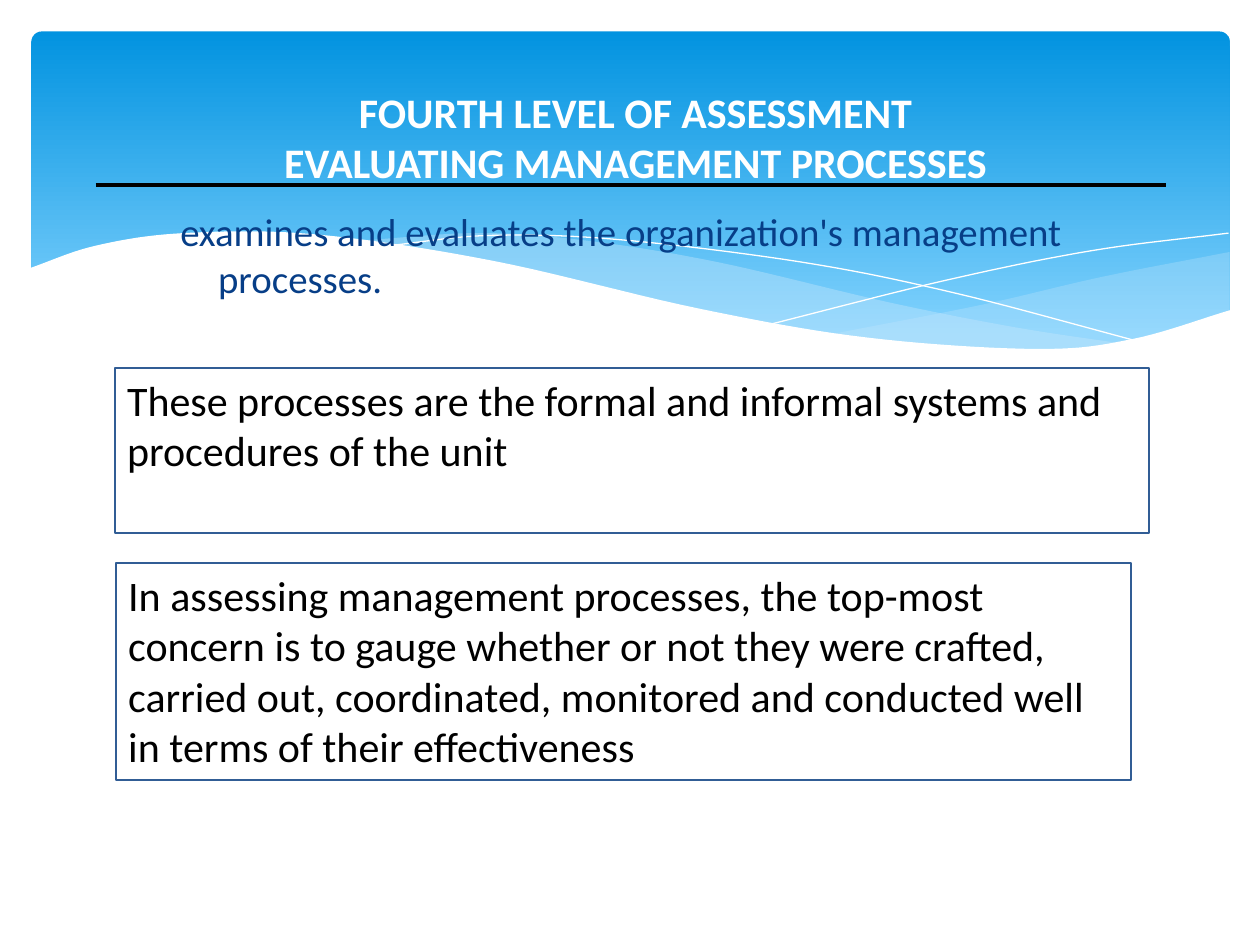
import pptx
import pptx.dml.color
import pptx.enum.shapes
import pptx.enum.text
import pptx.oxml
import pptx.oxml.ns
import pptx.util

Pt = pptx.util.Pt
RGBColor = pptx.dml.color.RGBColor
MSO_SHAPE = pptx.enum.shapes.MSO_SHAPE
MSO_ANCHOR = pptx.enum.text.MSO_ANCHOR
PP_ALIGN = pptx.enum.text.PP_ALIGN
DRAWING_NS = pptx.oxml.ns.nsdecls("a")

WHITE = RGBColor(0xFF, 0xFF, 0xFF)
BLACK = RGBColor(0, 0, 0)
SKY_TOP = RGBColor(0x02, 0x93, 0xE0)
SKY_BOTTOM = RGBColor(0x83, 0xD3, 0xFE)
PALE_BLUE = RGBColor(0xC6, 0xE7, 0xFC)
NAVY = RGBColor(0x07, 0x3E, 0x87)
BOX_BLUE = RGBColor(0x31, 0x5D, 0x95)

CURVE_STEPS = 10
HEADER_LEFT, HEADER_RIGHT, HEADER_BOTTOM = 16.6, 703.4, 236.9


def smooth_curve(knots):
    """Return points on a Catmull-Rom spline that passes through the knots."""
    (x0, y0), (x1, y1) = knots[:2]
    (x2, y2), (x3, y3) = knots[-2:]
    # One mirrored knot at each end gives the end pieces their direction.
    guides = [(2 * x0 - x1, 2 * y0 - y1), *knots, (2 * x3 - x2, 2 * y3 - y2)]
    points = [knots[0]]
    for piece in zip(guides, guides[1:], guides[2:], guides[3:]):
        for step in range(1, CURVE_STEPS + 1):
            t = step / CURVE_STEPS
            weights = ((-t + 2 * t**2 - t**3) / 2, (2 - 5 * t**2 + 3 * t**3) / 2,
                       (t + 4 * t**2 - 3 * t**3) / 2, (t**3 - t**2) / 2)
            points.append(tuple(sum(weight * knot[axis] for weight, knot in zip(weights, piece))
                                for axis in (0, 1)))
    return points


def write(shape, text, color, size, bold=False, **frame_format):
    """Fill the shape with one paragraph and return that paragraph."""
    frame = shape.text_frame
    frame.text = text
    frame_format = {"word_wrap": True, "auto_size": pptx.enum.text.MSO_AUTO_SIZE.NONE,
                    "vertical_anchor": MSO_ANCHOR.TOP, **frame_format}
    for key, value in frame_format.items():
        setattr(frame, key, value)
    paragraph = frame.paragraphs[0]
    for run in paragraph.runs:
        for key, value in {"name": "Calibri", "size": Pt(size), "bold": bold}.items():
            setattr(run.font, key, value)
        run.font.color.rgb = color
    return paragraph


presentation = pptx.Presentation()
presentation.slide_width, presentation.slide_height = Pt(720), Pt(540)
slide = presentation.slides.add_slide(presentation.slide_layouts[1])
shapes = slide.shapes
title, definition = slide.placeholders

# Blue header
header = shapes.add_shape(MSO_SHAPE.ROUNDED_RECTANGLE, Pt(18), Pt(18), Pt(684.7), Pt(194.4))
header.adjustments[0] = 0.03
header.shadow.inherit = False
header.line.fill.background()
header.fill.gradient()
header.fill.gradient_angle = 270
for stop, position, color in zip(header.fill.gradient_stops, (0, 0.9), (SKY_TOP, SKY_BOTTOM)):
    stop.position = position
    stop.color.rgb = color

# Waves from back to front: each has an upper edge, and a filled one also a lower edge.
# The white wave comes last and trims the header's bottom.
right_band = {
    "upper": [(476, 190.8), (561, 174.2), (630, 158.2), (702.7, 144)],
    "lower": [(476, 190.8), (536, 198), (578, 200), (640, 195.8), (702.7, 177.8)],
    "fill": PALE_BLUE, "opacity": 29}
middle_band = {
    "upper": [(206, 137.5), (274, 133.2), (335, 137.5), (410, 149.8), (508, 172.8),
              (581, 187.2), (643, 196.6)],
    "lower": [(206, 137.5), (261, 146.2), (323, 159.8), (433, 183.6), (520, 196.6),
              (589, 200.2), (643, 196.6)],
    "fill": PALE_BLUE, "opacity": 40}
falling_line = {
    "upper": [(222.5, 140.4), (279, 134.6), (352, 136.8), (458, 149.8), (547, 167.8),
              (653, 195.8)]}
rising_line = {"upper": [(441.4, 185), (538.6, 160.6), (623.5, 143.3), (702, 133.2)]}
white_wave = {
    "upper": [(HEADER_LEFT, 153.4), (54.7, 140.4), (105, 133.2), (180, 133.9), (281.5, 149),
              (399.6, 176.4), (495.4, 192.9), (592.6, 199.4), (647.3, 193.7),
              (HEADER_RIGHT, 177.1)],
    "lower": [(HEADER_LEFT, HEADER_BOTTOM), (HEADER_RIGHT, HEADER_BOTTOM)],
    "fill": WHITE, "opacity": 100}

for wave in (right_band, middle_band, falling_line, rising_line, white_wave):
    filled = "fill" in wave
    outline = smooth_curve(wave["upper"])
    if filled:
        outline += reversed(smooth_curve(wave["lower"]))
    outline = [(Pt(x), Pt(y)) for x, y in outline]
    builder = shapes.build_freeform(*outline[0])
    builder.add_line_segments(outline[1:], close=filled)
    ribbon = builder.convert_to_shape()
    ribbon.shadow.inherit = False
    if filled:
        ribbon.line.fill.background()
        ribbon.fill.solid()
        ribbon.fill.fore_color.rgb = wave["fill"]
        color_element = ribbon._element.spPr.find(".//" + pptx.oxml.ns.qn("a:srgbClr"))
        color_element.append(pptx.oxml.parse_xml(
            f'<a:alpha {DRAWING_NS} val="{wave["opacity"] * 1000}"/>'))
    else:
        ribbon.fill.background()
        ribbon.line.color.rgb = WHITE
        ribbon.line.width = Pt(0)

# Title and definition, raised above the header
for placeholder, place in [
        (title, {"left": 48.2, "top": 41, "width": 630, "height": 103.7}),
        (definition, {"left": 95.8, "top": 115.2, "width": 600.5, "height": 53.3})]:
    shapes._spTree.append(placeholder._element)
    for key, value in place.items():
        setattr(placeholder, key, Pt(value))

heading = write(title, "FOURTH LEVEL OF ASSESSMENT\vEVALUATING MANAGEMENT PROCESSES", WHITE, 24,
                bold=True, vertical_anchor=MSO_ANCHOR.MIDDLE, margin_bottom=Pt(32.9))
heading.alignment = PP_ALIGN.CENTER

sentence = write(definition, "examines and evaluates the organization's management processes.",
                 NAVY, 22.2)
sentence.space_before = Pt(4.4)
hanging_indent = Pt(21.6)
sentence_format = sentence._p.get_or_add_pPr()
sentence_format.set("marL", str(hanging_indent))
sentence_format.set("indent", str(-hanging_indent))
sentence_format.append(pptx.oxml.parse_xml(f"<a:buNone {DRAWING_NS}/>"))

rule = shapes.add_connector(pptx.enum.shapes.MSO_CONNECTOR.STRAIGHT,
                            Pt(54.7), Pt(105.8), Pt(666), Pt(105.8))
rule.line.color.rgb = BLACK
rule.line.width = Pt(2.25)
rule._element.spPr.append(pptx.oxml.parse_xml(f"<a:effectLst {DRAWING_NS}/>"))

# Explanation boxes
for left, top, width, height, explanation in [
        (65.5, 210.2, 591.1, 94.3,
         "These processes are the formal and informal systems and procedures of the unit"),
        (66.2, 321.8, 580.3, 123.8,
         "In assessing management processes, the top-most concern is to gauge whether or not "
         "they were crafted, carried out, coordinated, monitored and conducted well in terms "
         "of their effectiveness")]:
    box = shapes.add_shape(MSO_SHAPE.RECTANGLE, Pt(left), Pt(top), Pt(width), Pt(height))
    box.shadow.inherit = False
    box.fill.solid()
    box.fill.fore_color.rgb = WHITE
    box.line.color.rgb = BOX_BLUE
    box.line.width = Pt(1.25)
    write(box, explanation, BLACK, 24).alignment = PP_ALIGN.LEFT

presentation.save("out.pptx")
